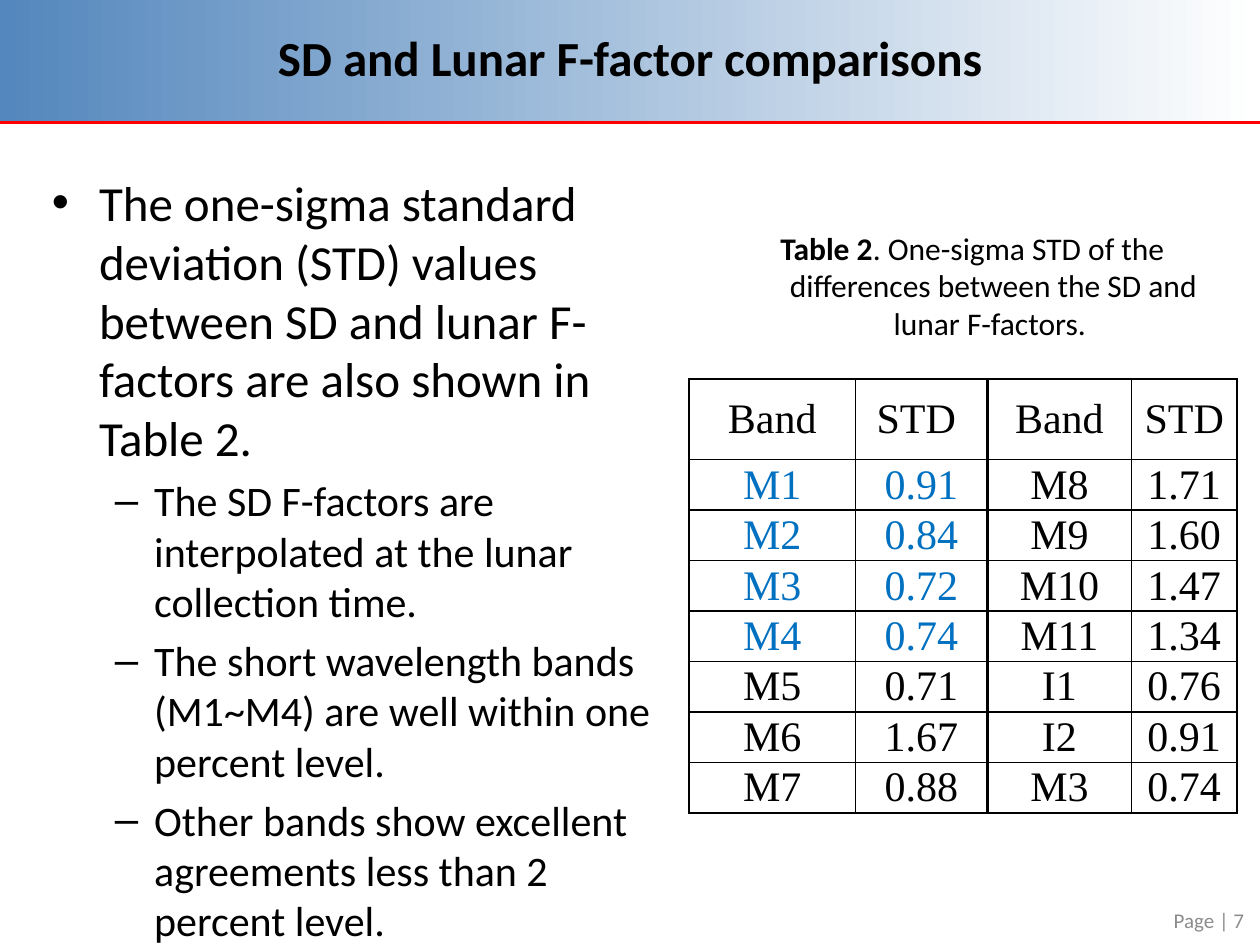
"""Build the slide on SD and lunar F-factor comparisons."""
from lxml import etree
from pptx import Presentation
from pptx.dml.color import RGBColor
from pptx.enum.shapes import MSO_CONNECTOR, MSO_SHAPE
from pptx.enum.text import MSO_ANCHOR, PP_ALIGN
from pptx.oxml.ns import qn
from pptx.util import Pt

LEFT, MID, RIGHT = PP_ALIGN.LEFT, PP_ALIGN.CENTER, PP_ALIGN.RIGHT
TOP, CENTER = MSO_ANCHOR.TOP, MSO_ANCHOR.MIDDLE
RECT, LINE = MSO_SHAPE.RECTANGLE, MSO_CONNECTOR.STRAIGHT
COLORS = {"ink": "000000", "sky": "5487BD", "paper": "FFFFFF",
          "rule": "FF0000", "mark": "0070C0", "note": "8C8C8C"}
ROWS = [
    ("Band", "STD ", "Band", "STD"),
    ("M1", "0.91", "M8", "1.71"),
    ("M2", "0.84", "M9", "1.60"),
    ("M3", "0.72", "M10", "1.47"),
    ("M4", "0.74", "M11", "1.34"),
    ("M5", "0.71", "I1", "0.76"),
    ("M6", "1.67", "I2", "0.91"),
    ("M7", "0.88", "M3", "0.74"),
]
WIDTHS = (95, 75.6, 82.1, 60.5)
POINTS = [
    (0, "The one-sigma standard deviation (STD) values between SD and lunar "
        "F-factors are also shown in Table 2."),
    (1, "The SD F-factors are interpolated at the lunar collection time."),
    (1, "The short wavelength bands (M1~M4) are well within one percent level."),
    (1, "Other bands show excellent agreements less than 2 percent level."),
]
LEVELS = [{"size": 28, "left": 27, "hang": 27, "mark": "•"},
          {"size": 24, "left": 58.5, "hang": 22.5, "mark": "–"}]


class Deck:
    """Hold the style and the current slide."""

    def __init__(self):
        self.show = Presentation()
        self.show.slide_width, self.show.slide_height = Pt(720), Pt(540)
        self.slide = self.show.slides.add_slide(self.show.slide_layouts[5])
        self.shapes = self.slide.shapes

    def color(self, name):
        return RGBColor.from_string(COLORS[name])

    def run(self, para, text, size, color="ink", bold=False, name="Calibri"):
        run = para.add_run()
        run.text = text
        form = {"size": Pt(size), "bold": bold, "name": name}
        for key, value in form.items():
            setattr(run.font, key, value)
        run.font.color.rgb = self.color(color)

    def indent(self, para, left, hang, mark=None):
        props = para._p.get_or_add_pPr()
        props.set("marL", str(int(Pt(left))))
        props.set("indent", str(-int(Pt(hang))))
        if mark:
            font = etree.SubElement(props, qn("a:buFont"))
            font.set("typeface", "Arial")
            etree.SubElement(props, qn("a:buChar")).set("char", mark)

    def band(self, x, y, wide, high):
        band = self.shapes.add_shape(RECT, Pt(x), Pt(y), Pt(wide), Pt(high))
        band.shadow.inherit = False
        band.line.fill.background()
        band.fill.gradient()
        band.fill.gradient_angle = 0
        for stop, name in zip(band.fill.gradient_stops, ("sky", "paper")):
            stop.color.rgb = self.color(name)

    def rule(self, y, wide):
        rule = self.shapes.add_connector(LINE, 0, Pt(y), Pt(wide), Pt(y))
        rule.line.color.rgb = self.color("rule")
        rule.line.width = Pt(2.25)
        etree.SubElement(rule._element.spPr, qn("a:effectLst"))

    def title(self, text, x, y, wide, high):
        title = self.shapes.title
        place = {"left": x, "top": y, "width": wide, "height": high}
        for key, value in place.items():
            setattr(title, key, Pt(value))
        title.text_frame.vertical_anchor = CENTER
        para = title.text_frame.paragraphs[0]
        para.alignment = MID
        self.run(para, text, 28, bold=True)
        title._element.getparent().append(title._element)

    def box(self, x, y, wide, high, anchor=TOP, align=LEFT):
        box = self.shapes.add_textbox(Pt(x), Pt(y), Pt(wide), Pt(high))
        frame = box.text_frame
        frame.word_wrap = True
        frame.vertical_anchor = anchor
        frame.paragraphs[0].alignment = align
        return frame

    def bullets(self, items, *place):
        frame = self.box(*place)
        for spot, (level, text) in enumerate(items):
            para = frame.add_paragraph() if spot else frame.paragraphs[0]
            form = LEVELS[level]
            para.level = level
            self.indent(para, form["left"], form["hang"], form["mark"])
            if spot:
                para.space_before = Pt(4.8)
            self.run(para, text, form["size"])

    def caption(self, parts, *place):
        para = self.box(*place, CENTER, MID).paragraphs[0]
        self.indent(para, 28, 28)
        para.space_after = Pt(3.6)
        for text, bold in parts:
            self.run(para, text, 18, bold=bold)

    def footer(self, text, *place):
        para = self.box(*place, CENTER, RIGHT).paragraphs[0]
        self.run(para, text, 12, "note")

    def border(self, cell, col):
        thick = {"R": 2.25} if col == 1 else {"L": 2.25} if col == 2 else {}
        props = cell._tc.get_or_add_tcPr()
        for spot, side in enumerate("LRTB"):
            edge = etree.Element(qn("a:ln" + side))
            edge.set("w", str(int(Pt(thick.get(side, 1)))))
            fill = etree.SubElement(edge, qn("a:solidFill"))
            etree.SubElement(fill, qn("a:srgbClr")).set("val", COLORS["ink"])
            props.insert(spot, edge)

    def cell(self, cell, text, col, color):
        form = {"vertical_anchor": CENTER, "margin_left": Pt(5),
                "margin_right": Pt(5), "margin_top": 0, "margin_bottom": 0}
        for key, value in form.items():
            setattr(cell, key, value)
        cell.fill.background()
        para = cell.text_frame.paragraphs[0]
        para.alignment = MID
        self.run(para, text, 24, color, name="Times New Roman")
        self.border(cell, col)

    def table(self, rows, widths, x, y, high):
        frame = self.shapes.add_table(len(rows), len(widths), Pt(x), Pt(y),
                                      Pt(sum(widths)), Pt(high))
        table = frame.table
        table.first_row = table.horz_banding = False
        for col, wide in zip(table.columns, widths):
            col.width = Pt(wide)
        for i, row in enumerate(rows):
            table.rows[i].height = Pt(23 if i else 46)
            for j, text in enumerate(row):
                color = "mark" if 1 <= i <= 4 and j < 2 else "ink"
                self.cell(table.cell(i, j), text, j, color)
        frame.height = Pt(high)


def main():
    deck = Deck()
    deck.band(0, -0.72, 720, 70)
    deck.rule(70, 720)
    deck.title("SD and Lunar F-factor comparisons", 36, 0, 648, 65)
    deck.bullets(POINTS, 22.5, 95, 378, 416)
    deck.footer("Page | 7", 550, 511, 168, 29)
    deck.table(ROWS, WIDTHS, 393.8, 216.7, 247.7)
    deck.caption([(" ", False), ("Table 2", True),
                  (". One-sigma STD of the differences between the SD and "
                   "lunar F-factors. ", False)], 400.3, 126.7, 306.7, 72.7)
    deck.show.save("out.pptx")


if __name__ == "__main__":
    main()
